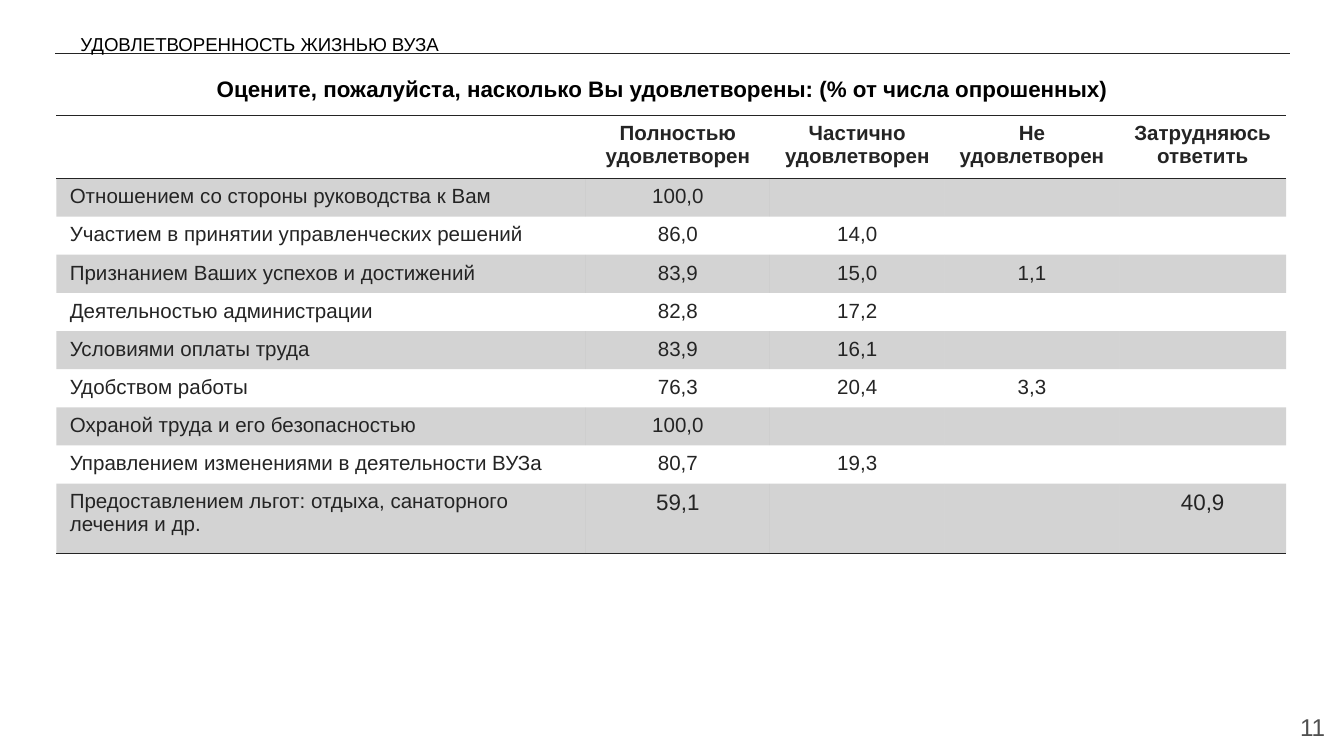
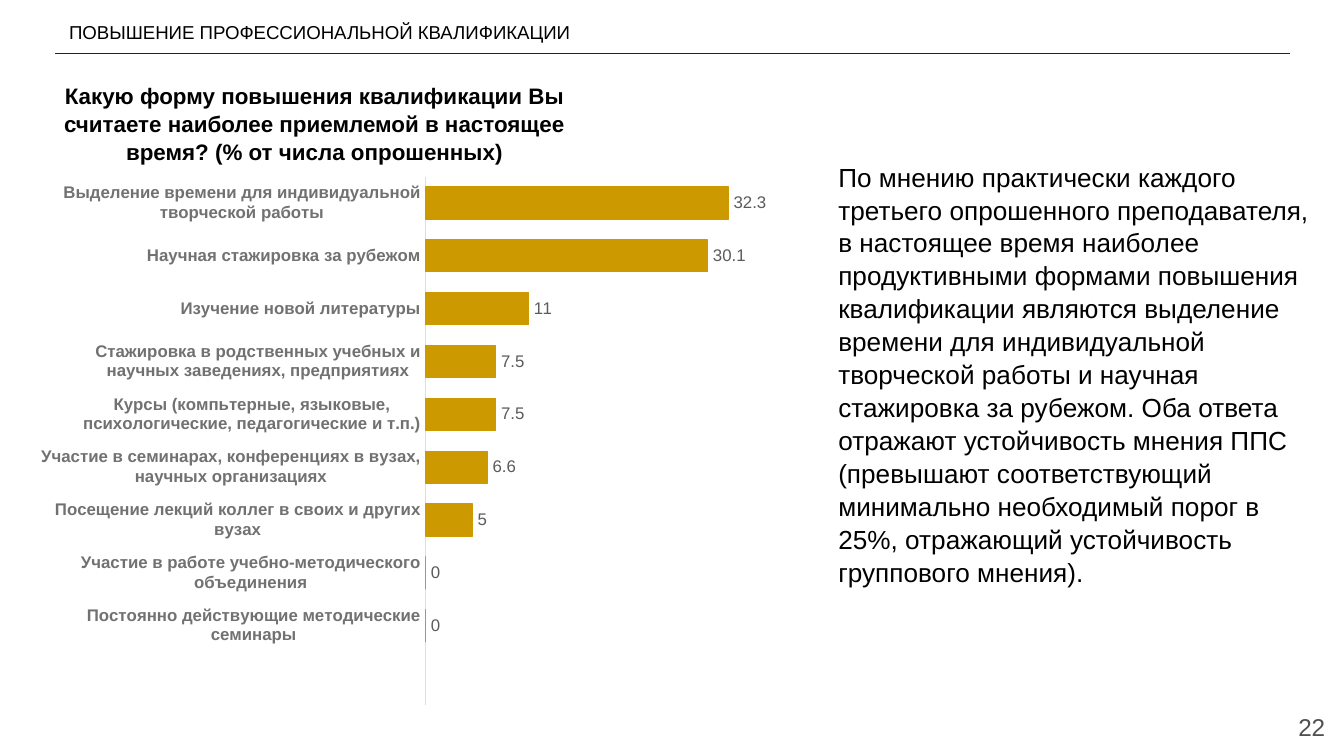
"""Builds two survey slides: a satisfaction table and a professional training bar chart."""
from dataclasses import dataclass

from lxml import etree
from pptx import Presentation
from pptx import util as u
from pptx.chart import data
from pptx.dml import color
from pptx.enum import chart as charts, shapes, text
from pptx.oxml import ns, parse_xml

Pt = u.Pt
Align, Anchor = text.PP_ALIGN, text.MSO_ANCHOR


@dataclass(frozen=True)
class Theme:
    font: str = "Arial"
    ink: str = "242424"
    black: str = "000000"
    number: str = "505050"
    category: str = "717171"
    label: str = "5B5B5B"
    axis: str = "DEDEDE"
    bar: str = "CC9900"
    small: float = 9
    heading: float = 10
    cell: float = 11
    question: float = 12
    page: float = 13
    body: float = 14


theme = Theme()


def style(font, size, tint, bold=False):
    font.name, font.size, font.bold = theme.font, Pt(size), bold
    font.color.rgb = color.RGBColor.from_string(tint)


def add_text(page, frame, lines, size, tint=theme.black, bold=False, align=Align.LEFT,
             anchor=Anchor.BOTTOM, spacing=1.0, inset=(7.2, 3.6)):
    box = page.shapes.add_textbox(*map(Pt, frame)).text_frame
    box.word_wrap = True
    box.vertical_anchor = anchor
    box.margin_left = box.margin_right = Pt(inset[0])
    box.margin_top = box.margin_bottom = Pt(inset[1])
    box.text = "\n".join(lines)
    for para in box.paragraphs:
        para.alignment, para.line_spacing = align, spacing
        style(para.font, size, tint, bold)


deck = Presentation()
deck.slide_width, deck.slide_height = Pt(720), Pt(405)

headings = [
    ("11", "УДОВЛЕТВОРЕННОСТЬ ЖИЗНЬЮ ВУЗА", (36, 1.4, 350, 31.7)),
    ("22", "ПОВЫШЕНИЕ ПРОФЕССИОНАЛЬНОЙ КВАЛИФИКАЦИИ", (30, 7.2, 482, 19.4)),
]
for number, heading, frame in headings:
    page = deck.slides.add_slide(deck.slide_layouts[6])
    rule = page.shapes.add_connector(
        shapes.MSO_CONNECTOR.STRAIGHT, Pt(29.5), Pt(28.8), Pt(691.2), Pt(28.8))
    rule.line.color.rgb = color.RGBColor.from_string(theme.ink)
    rule.line.width = Pt(0.75)
    etree.SubElement(rule._element.spPr, ns.qn("a:effectLst"))
    add_text(page, (674, 373.7, 43, 31), [number], theme.page, theme.number,
             align=Align.RIGHT, anchor=Anchor.MIDDLE, inset=(7.2, 7.2))
    add_text(page, frame, [heading], theme.heading)
satisfaction, training = deck.slides

add_text(satisfaction, (8.6, 31.7, 692.6, 30.2),
         ["Оцените, пожалуйста, насколько Вы удовлетворены: (% от числа опрошенных)"],
         theme.question, bold=True, align=Align.CENTER, anchor=Anchor.TOP,
         spacing=1.08, inset=(7.2, 7.2))

ratings = [
    ("", "Полностью удовлетворен", "Частично удовлетворен", "Не удовлетворен",
     "Затрудняюсь ответить"),
    ("Отношением со стороны руководства к Вам", "100,0", "", "", ""),
    ("Участием в принятии управленческих решений", "86,0", "14,0", "", ""),
    ("Признанием Ваших успехов и достижений", "83,9", "15,0", "1,1", ""),
    ("Деятельностью администрации", "82,8", "17,2", "", ""),
    ("Условиями оплаты труда", "83,9", "16,1", "", ""),
    ("Удобством работы", "76,3", "20,4", "3,3", ""),
    ("Охраной труда и его безопасностью", "100,0", "", "", ""),
    ("Управлением изменениями в деятельности ВУЗа", "80,7", "19,3", "", ""),
    ("Предоставлением льгот: отдыха, санаторного лечения и др.", "59,1", "", "", "40,9"),
]
widths = [283.7, 98.6, 93.6, 93.6, 89.3]
last = len(ratings) - 1
heights = [33.8] + [20.4] * (last - 1) + [37.4]
table = satisfaction.shapes.add_table(
    len(ratings), len(widths), Pt(30.2), Pt(61.8), Pt(sum(widths)), Pt(sum(heights))).table
table.first_row = table.horz_banding = False
table._tbl.tblPr.find(ns.qn("a:tableStyleId")).text = "{2D5ABB26-0587-4C30-8999-92F81FD0307C}"
for column, width in zip(table.columns, widths):
    column.width = Pt(width)
for row, height in zip(table.rows, heights):
    row.height = Pt(height)

for i, rating in enumerate(ratings):
    edges = {0: ("lnB", "lnT"), last: ("lnB",)}.get(i, ())
    for j, value in enumerate(rating):
        cell = table.cell(i, j)
        cell.text = value
        para = cell.text_frame.paragraphs[0]
        para.alignment = Align.CENTER if j else Align.LEFT
        size = theme.question if i == last and j else theme.cell
        style(para.font, size, theme.ink, bold=i == 0)
        if not value:
            para._p.get_or_add_endParaRPr().set("sz", str(theme.cell * 100))
        properties = cell._tc.get_or_add_tcPr()
        if i % 2:
            cell.fill.solid()
            cell.fill.fore_color.rgb = color.RGBColor.from_string(theme.ink)
            tint = properties.find(".//" + ns.qn("a:srgbClr"))
            etree.SubElement(tint, ns.qn("a:alpha"), val="20000")
        else:
            cell.fill.background()
        for edge in edges:
            properties.insert(0, parse_xml(
                f'<a:{edge} {ns.nsdecls("a")} w="12700"><a:solidFill>'
                f'<a:srgbClr val="{theme.ink}"/></a:solidFill></a:{edge}>'))

forms = [
    ("", None),
    ("Постоянно действующие методические семинары", 0),
    ("Участие в работе учебно-методического объединения", 0),
    ("Посещение лекций коллег в своих и других вузах", 5),
    ("Участие в семинарах, конференциях в вузах, научных организациях", 6.6),
    ("Курсы (компьтерные, языковые, психологические, педагогические и т.п.)", 7.5),
    ("Стажировка в родственных учебных и научных заведениях, предприятиях", 7.5),
    ("Изучение новой литературы", 11),
    ("Научная стажировка за рубежом", 30.1),
    ("Выделение времени для индивидуальной творческой работы", 32.3),
]
shares = data.CategoryChartData()
shares.categories = [form for form, share in forms]
shares.add_series("Series 1", [share for form, share in forms])
chart = training.shapes.add_chart(
    charts.XL_CHART_TYPE.BAR_CLUSTERED, Pt(20.2), Pt(94.3), Pt(399.6), Pt(283.7), shares).chart
chart.has_legend = chart.has_title = False
style(chart.font, theme.heading, theme.ink)

names = chart.category_axis
names.major_tick_mark = names.minor_tick_mark = charts.XL_TICK_MARK.NONE
style(names.tick_labels.font, theme.small, theme.category, bold=True)
names.format.line.color.rgb = color.RGBColor.from_string(theme.axis)
names.format.line.width = Pt(0.75)
scale = chart.value_axis
scale.visible = scale.has_major_gridlines = False
scale.minimum_scale, scale.maximum_scale = 0, 35

plot = chart.plots[0]
plot.gap_width = 66
plot.vary_by_categories = False
bars = plot.series[0].format
bars.fill.solid()
bars.fill.fore_color.rgb = bars.line.color.rgb = color.RGBColor.from_string(theme.bar)
bars.line.width = Pt(0.75)
plot.has_data_labels = True
labels = plot.data_labels
labels.show_value = True
labels.position = charts.XL_LABEL_POSITION.OUTSIDE_END
style(labels.font, theme.small, theme.label)

area = chart._chartSpace.chart.plotArea
for layout in area.findall(ns.qn("c:layout")):
    area.remove(layout)
area.insert(0, parse_xml(
    f'<c:layout {ns.nsdecls("c")}><c:manualLayout><c:layoutTarget val="inner"/>'
    '<c:xMode val="edge"/><c:yMode val="edge"/><c:x val="0.52"/><c:y val="0"/>'
    '<c:w val="0.44"/><c:h val="1"/></c:manualLayout></c:layout>'))

add_text(training, (20.2, 26.6, 296.6, 65.5),
         ["Какую форму повышения квалификации Вы считаете наиболее приемлемой "
          "в настоящее время? (% от числа опрошенных)"],
         theme.question, bold=True, align=Align.CENTER, spacing=1.05)
add_text(training, (442, 75.6, 275, 242.6),
         ["По мнению практически каждого третьего опрошенного преподавателя,",
          "в настоящее время наиболее продуктивными формами повышения квалификации "
          "являются выделение времени для индивидуальной творческой работы и научная "
          "стажировка за рубежом. Оба ответа отражают устойчивость мнения ППС "
          "(превышают соответствующий минимально необходимый порог в 25%, отражающий "
          "устойчивость группового мнения)."],
         theme.body, spacing=1.05)

deck.save("out.pptx")
